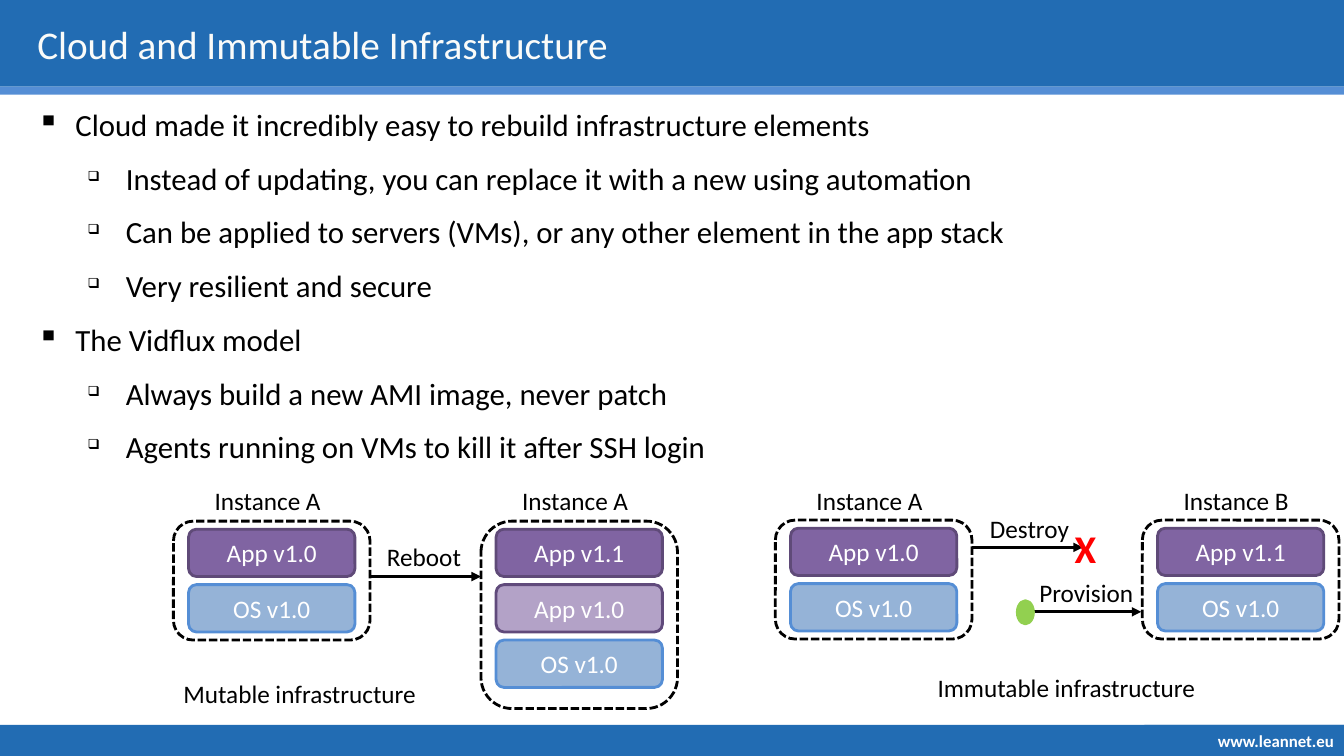
from dataclasses import dataclass

from lxml import etree
from pptx import Presentation
from pptx import util as u
from pptx.dml.color import RGBColor
from pptx.enum import dml, shapes, text
from pptx.oxml.ns import qn
from pptx.shapes.autoshape import Shape
from pptx.slide import Slide

COLORS = {
    "bar": "226CB3", "stripe": "558ED5", "title": "FAFBF9", "white": "FFFFFF",
    "black": "000000", "app": "8064A2", "app_line": "5F4A78",
    "old_app": "B3A2C7", "old_app_line": "604A7B", "os": "95B3D7",
    "os_line": "558ED5", "red": "FF0000", "green": "92D050",
}


@dataclass
class Layer:
    label: str
    kind: str


@dataclass
class Instance:
    label: str
    left: float
    top: float
    height: float
    layers: list[Layer]


@dataclass
class Arrow:
    left: float
    right: float
    y: float


@dataclass
class Caption:
    label: str
    left: float
    top: float
    width: float
    height: float = 0.4
    size: int = 18
    color: str = "black"
    bold: bool = False


APP_1, APP_2 = Layer("App v1.0", "app"), Layer("App v1.1", "app")
OLD_APP, OS = Layer("App v1.0", "old_app"), Layer("OS v1.0", "os")

BARS = [(0, 0.86, "bar"), (7.19, 0.31, "bar"), (0.86, 0.08, "stripe")]
BULLETS = [
    (0, "Cloud made it incredibly easy to rebuild infrastructure elements"),
    (1, "Instead of updating, you can replace it with a new using automation"),
    (1, "Can be applied to servers (VMs), or any other element in the app stack"),
    (1, "Very resilient and secure"),
    (0, "The Vidflux model"),
    (1, "Always build a new AMI image, never patch"),
    (1, "Agents running on VMs to kill it after SSH login"),
]
INSTANCES = [
    Instance("Instance A", 1.72, 5.17, 1.18, [APP_1, OS]),
    Instance("Instance A", 4.77, 5.17, 1.86, [APP_2, OLD_APP, OS]),
    Instance("Instance A", 7.69, 5.16, 1.18, [APP_1, OS]),
    Instance("Instance B", 11.33, 5.16, 1.18, [APP_2, OS]),
]
ARROWS = [Arrow(3.66, 4.77, 5.72), Arrow(9.64, 10.74, 5.43), Arrow(10.22, 11.32, 6.07)]
CAPTIONS = [
    Caption("Reboot", 3.74, 5.32, 0.94),
    Caption("Mutable infrastructure", 1.72, 6.68, 2.53),
    Caption("Destroy", 9.72, 5.04, 0.99),
    Caption("Provision", 10.21, 5.68, 1.14),
    Caption("Immutable infrastructure", 9.2, 6.62, 2.78),
    Caption("X", 10.56, 5.15, 0.42, 0.57, 28, "red", True),
]


def rgb(name: str) -> RGBColor:
    return RGBColor.from_string(COLORS[name])


def write(p, label: str, size: int = 18, color: str = "black",
          bold: bool = False, align=text.PP_ALIGN.LEFT) -> None:
    p.alignment = align
    r = p.add_run()
    r.text = label
    r.font.name = "Calibri"
    r.font.size = u.Pt(size)
    r.font.bold = bold
    r.font.color.rgb = rgb(color)


def add_box(s: Slide, kind, left: float, top: float, width: float, height: float,
            fill: str | None = None, line: str | None = None) -> Shape:
    sp = s.shapes.add_shape(kind, *map(u.Inches, (left, top, width, height)))
    sp.shadow.inherit = False
    if fill:
        sp.fill.solid()
        sp.fill.fore_color.rgb = rgb(fill)
    else:
        sp.fill.background()
    if line:
        sp.line.color.rgb = rgb(line)
        sp.line.width = u.Pt(2)
    else:
        sp.line.fill.background()
    sp.text_frame.vertical_anchor = text.MSO_ANCHOR.MIDDLE
    return sp


def add_caption(s: Slide, c: Caption) -> None:
    sp = s.shapes.add_textbox(*map(u.Inches, (c.left, c.top, c.width, c.height)))
    tf = sp.text_frame
    tf.word_wrap = False
    tf.auto_size = text.MSO_AUTO_SIZE.SHAPE_TO_FIT_TEXT
    write(tf.paragraphs[0], c.label, c.size, c.color, c.bold)


def add_bullets(s: Slide) -> None:
    sp = s.shapes.add_textbox(0, u.Inches(1), u.Inches(13.33), u.Inches(4.24))
    tf = sp.text_frame
    tf.word_wrap = True
    for i, (level, line) in enumerate(BULLETS):
        p = tf.add_paragraph() if i else tf.paragraphs[0]
        p.level = level
        p.space_before = u.Pt(12 if i else 0)
        pPr = p._p.get_or_add_pPr()
        pPr.set("marL", str(u.Inches(0.65 + 0.5 * level)))
        pPr.set("indent", str(u.Inches(-0.38)))
        if level:
            etree.SubElement(pPr, qn("a:buSzPct")).set("val", "45000")
        etree.SubElement(pPr, qn("a:buChar")).set("char", "▪❑"[level])
        write(p, line, 22)


def add_instance(s: Slide, inst: Instance) -> None:
    """Draw a dashed frame with its label above and its layers stacked inside."""
    rounded = shapes.MSO_SHAPE.ROUNDED_RECTANGLE
    frame = add_box(s, rounded, inst.left, inst.top, 1.95, inst.height, line="black")
    frame.line.dash_style = dml.MSO_LINE.SQUARE_DOT
    for i, layer in enumerate(inst.layers):
        sp = add_box(s, rounded, inst.left + 0.15, inst.top + 0.08 + 0.55 * i,
                     1.65, 0.47, layer.kind, layer.kind + "_line")
        write(sp.text_frame.paragraphs[0], layer.label, color="white",
              align=text.PP_ALIGN.CENTER)
    add_caption(s, Caption(inst.label, inst.left + 0.31, 4.77, 1.27))


def add_arrow(s: Slide, a: Arrow) -> None:
    cx = s.shapes.add_connector(shapes.MSO_CONNECTOR.STRAIGHT,
                                *map(u.Inches, (a.left, a.y, a.right, a.y)))
    cx.line.color.rgb = rgb("black")
    cx.line.width = u.Pt(2.25)
    etree.SubElement(cx.line._get_or_add_ln(), qn("a:tailEnd")).set("type", "triangle")
    etree.SubElement(cx._element.spPr, qn("a:effectLst"))


def add_title(s: Slide) -> None:
    title = s.shapes.title
    title.left, title.top = u.Inches(0.27), 0
    title.width, title.height = u.Inches(9.77), u.Inches(0.86)
    title.text_frame.vertical_anchor = text.MSO_ANCHOR.MIDDLE
    write(title.text_frame.paragraphs[0], "Cloud and Immutable Infrastructure", 28, "title")
    # Bring the title in front of the header bar.
    s.shapes.element.append(title.element)


def main() -> None:
    prs = Presentation()
    prs.slide_width, prs.slide_height = u.Inches(13.33), u.Inches(7.5)
    s = prs.slides.add_slide(prs.slide_layouts[5])
    rect = shapes.MSO_SHAPE.RECTANGLE
    for top, height, fill in BARS:
        add_box(s, rect, 0, top, 13.33, height, fill)
    site = add_box(s, rect, 11.35, 7.19, 1.98, 0.31, "bar")
    write(site.text_frame.paragraphs[0], "www.leannet.eu", 12, "white", True,
          text.PP_ALIGN.RIGHT)
    add_title(s)
    add_bullets(s)
    for inst in INSTANCES:
        add_instance(s, inst)
    for arrow in ARROWS:
        add_arrow(s, arrow)
    for caption in CAPTIONS:
        add_caption(s, caption)
    add_box(s, shapes.MSO_SHAPE.OVAL, 10.09, 5.96, 0.16, 0.23, "green", "green")
    prs.save("out.pptx")


if __name__ == "__main__":
    main()
